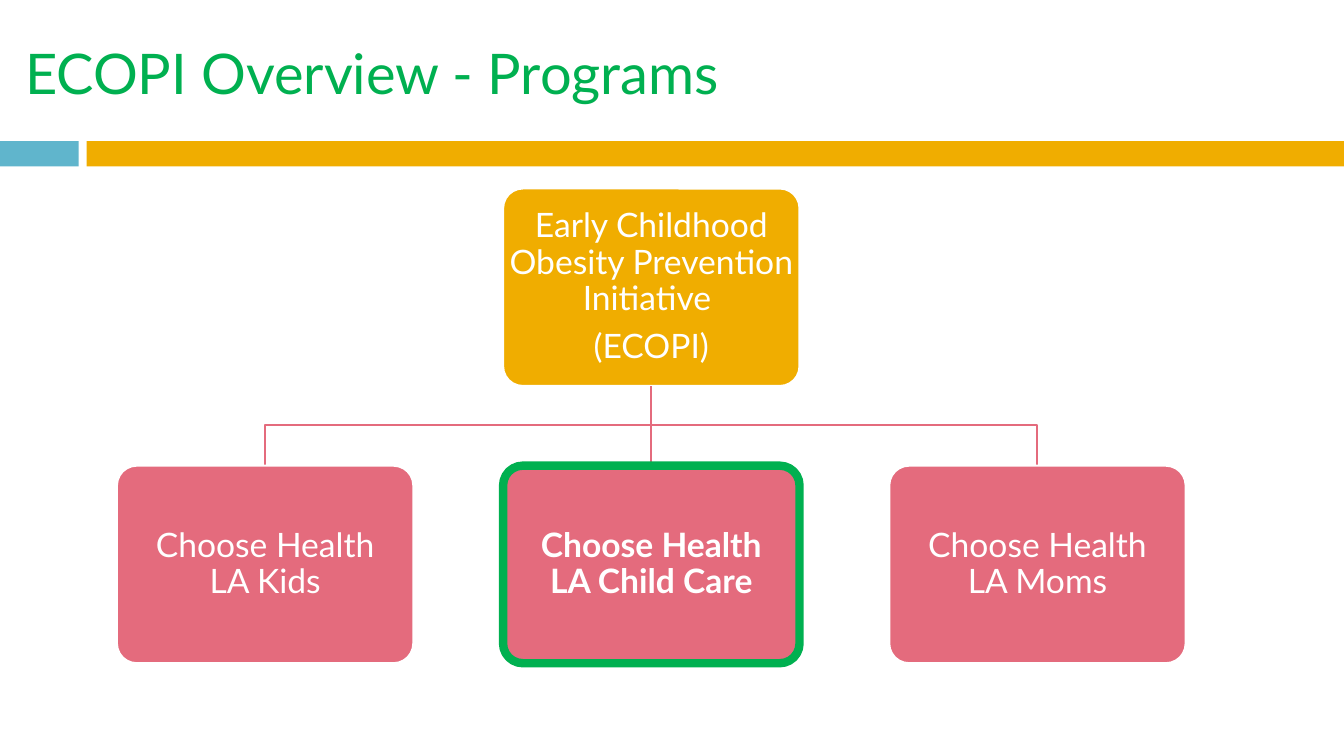
"""Builds the ECOPI programs overview slide."""
from lxml import etree
from pptx import Presentation
from pptx.dml.color import RGBColor
from pptx.enum.shapes import MSO_CONNECTOR, MSO_SHAPE
from pptx.enum.text import MSO_ANCHOR, PP_ALIGN
from pptx.oxml.ns import qn
from pptx.util import Inches, Pt

RECT, ROUNDED = MSO_SHAPE.RECTANGLE, MSO_SHAPE.ROUNDED_RECTANGLE
STRAIGHT = MSO_CONNECTOR.STRAIGHT
MIDDLE, LEFT, CENTER = MSO_ANCHOR.MIDDLE, PP_ALIGN.LEFT, PP_ALIGN.CENTER

COLORS = {"white": "FFFFFF", "blue": "60B5CC", "gold": "F0AD00",
          "pink": "E46B7D", "green": "00B050"}
CARD_W, CARD_H = 2.94, 1.96
ROOT_TOP, PROGRAM_TOP, BRANCH_Y = 1.87, 4.62, 4.22
ROOT_X, PROGRAM_STEP = 6.46, 3.83
PROGRAMS = [
    ("Choose Health LA Kids", {}),
    ("Choose Health LA Child Care",
     {"border": "green", "border_width": 6, "bold": True}),
    ("Choose Health LA Moms", {}),
]


class Deck:
    """Holds the style and the current slide."""

    def __init__(self, prs, font="Lato"):
        self.font = font
        self.s = prs.slides.add_slide(prs.slide_layouts[6])

    def color(self, name):
        return RGBColor.from_string(COLORS[name])

    def stroke(self, line, color, width):
        line.color.rgb = self.color(color)
        line.width = Pt(width)

    def add_text(self, sp, lines, size, color, align, bold=False, spacing=1.0,
                 gap=0, margin_x=0.1, margin_y=0.1):
        tf = sp.text_frame
        frame = {"word_wrap": True, "vertical_anchor": MIDDLE,
                 "margin_left": Inches(margin_x), "margin_right": Inches(margin_x),
                 "margin_top": Inches(margin_y), "margin_bottom": Inches(margin_y)}
        for name, value in frame.items():
            setattr(tf, name, value)
        for i, text in enumerate(lines):
            p = tf.add_paragraph() if i else tf.paragraphs[0]
            p.alignment, p.line_spacing = align, spacing
            if i:
                p.space_before = Pt(gap)
            r = p.add_run()
            r.text = text
            for name, value in {"name": self.font, "size": Pt(size), "bold": bold}.items():
                setattr(r.font, name, value)
            r.font.color.rgb = self.color(color)

    def title(self, text, x, y, w, h):
        sp = self.s.shapes.add_textbox(Inches(x), Inches(y), Inches(w), Inches(h))
        self.add_text(sp, [text], 40, "green", LEFT, margin_y=0.05)

    def shape(self, kind, x, y, w, h, fill):
        sp = self.s.shapes.add_shape(kind, Inches(x), Inches(y), Inches(w), Inches(h))
        sp.shadow.inherit = False
        sp.fill.solid()
        sp.fill.fore_color.rgb = self.color(fill)
        sp.line.fill.background()
        return sp

    def card(self, center_x, y, lines, fill, border="white", border_width=1.5,
             bold=False, margin_x=0.1):
        sp = self.shape(ROUNDED, center_x - CARD_W / 2, y, CARD_W, CARD_H, fill)
        sp.adjustments[0] = 0.1
        self.stroke(sp.line, border, border_width)
        self.add_text(sp, lines, 24, "white", CENTER, bold, 0.9, 8.4, margin_x)

    def straight(self, x, y1, y2):
        sp = self.s.shapes.add_connector(STRAIGHT, Inches(x), Inches(y1),
                                         Inches(x), Inches(y2))
        self.stroke(sp.line, "pink", 1.5)
        etree.SubElement(sp.element.spPr, qn("a:effectLst"))

    def branch(self, points):
        start, *rest = [(Inches(x), Inches(y)) for x, y in points]
        builder = self.s.shapes.build_freeform(*start)
        builder.add_line_segments(rest, close=False)
        sp = builder.convert_to_shape()
        sp.shadow.inherit = False
        sp.fill.background()
        self.stroke(sp.line, "pink", 1.5)


def main():
    prs = Presentation()
    prs.slide_width, prs.slide_height = Inches(13.33), Inches(7.5)
    deck = Deck(prs)
    deck.shape(RECT, 0, 1.4, 0.78, 0.25, "blue")
    deck.shape(RECT, 0.86, 1.4, 12.47, 0.25, "gold")
    deck.title("ECOPI Overview - Programs", 0.15, 0.18, 11.89, 1.08)

    deck.card(ROOT_X, ROOT_TOP,
              ["Early Childhood Obesity Prevention Initiative ", "(ECOPI)"],
              "gold", margin_x=0)
    root_bottom = ROOT_TOP + CARD_H
    for i, (name, style) in enumerate(PROGRAMS):
        x = ROOT_X + (i - 1) * PROGRAM_STEP
        if x == ROOT_X:
            deck.straight(x, root_bottom, PROGRAM_TOP)
        else:
            deck.branch([(ROOT_X, root_bottom), (ROOT_X, BRANCH_Y),
                         (x, BRANCH_Y), (x, PROGRAM_TOP)])
        deck.card(x, PROGRAM_TOP, [name], "pink", **style)
    prs.save("out.pptx")


if __name__ == "__main__":
    main()
